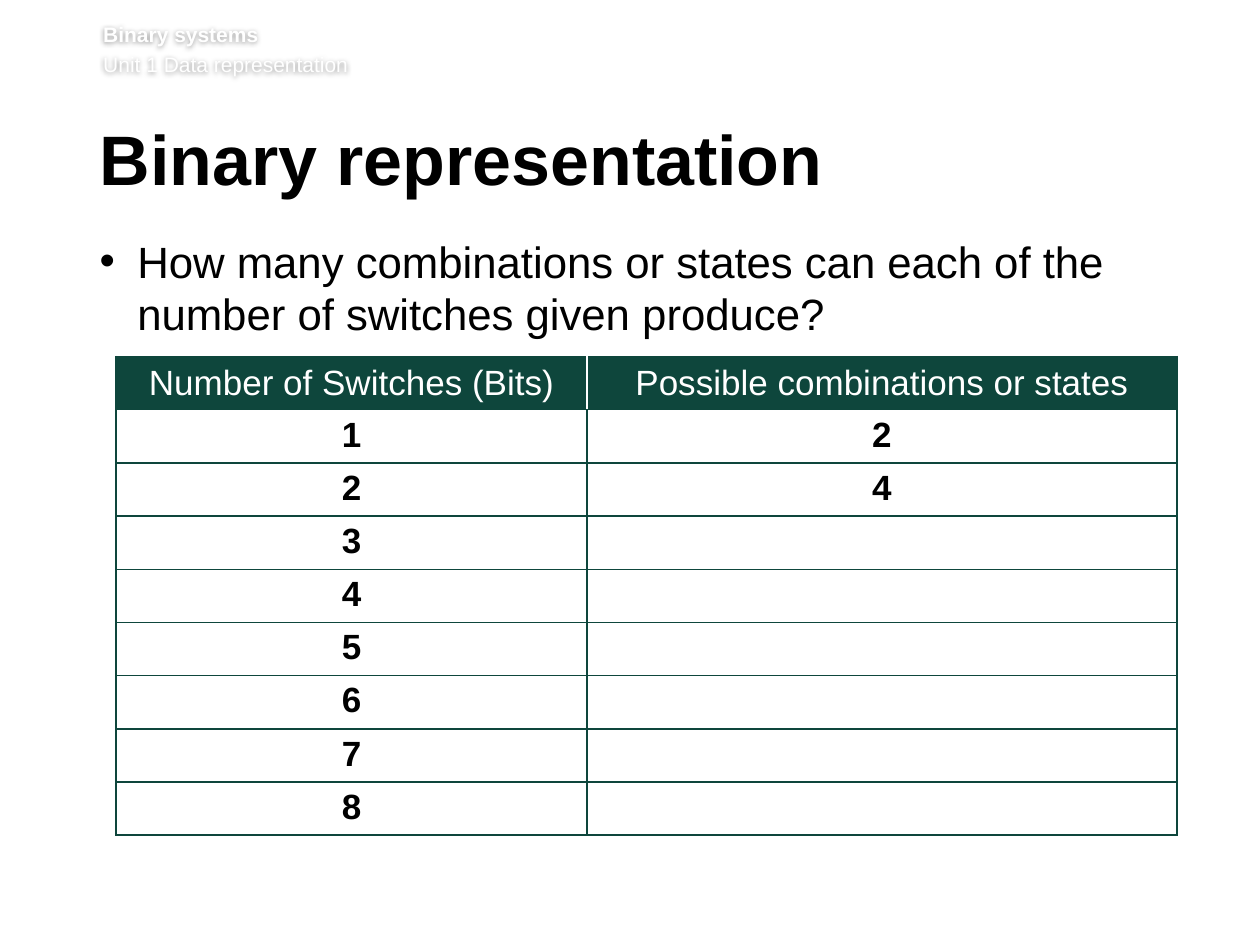
import lxml.etree
import pptx
import pptx.dml.color
import pptx.enum.text
import pptx.oxml
import pptx.oxml.ns
import pptx.util

Pt = pptx.util.Pt
qn = pptx.oxml.ns.qn
GREEN, WHITE, BLACK = "0E463C", "FFFFFF", "000000"
ROW_HEIGHT = 29.55
COLUMN_WIDTHS = (269.28, 336.96)
ROWS = [("Number of Switches (Bits)", "Possible combinations or states"),
        ("1", "2"), ("2", "4")] + [(str(bits), "") for bits in range(3, 9)]


def color(value):
    return pptx.dml.color.RGBColor.from_string(value)


def write(para, text, size, fill=BLACK, bold=False, **layout):
    """Put text in a paragraph; layout holds paragraph properties."""
    for name, value in layout.items():
        setattr(para, name, value)
    span = para.add_run()
    span.text = text
    span.font.name = "Arial"
    span.font.size = Pt(size)
    span.font.bold = bold
    span.font.color.rgb = color(fill)


def add_box(page, left, top, width, height, margins):
    box = page.shapes.add_textbox(Pt(left), Pt(top), Pt(width), Pt(height))
    frame = box.text_frame
    frame.word_wrap = True
    for side, margin in zip(("left", "top", "right", "bottom"), margins):
        setattr(frame, f"margin_{side}", Pt(margin))
    return box


def add_bullet(para, indent):
    properties = para._p.get_or_add_pPr()
    properties.set("marL", str(Pt(indent)))
    properties.set("indent", str(-Pt(indent)))
    lxml.etree.SubElement(properties, qn("a:buFont"), typeface="Arial")
    lxml.etree.SubElement(properties, qn("a:buChar"), char="•")


def add_soft_shadow(box):
    box._element.spPr.append(pptx.oxml.parse_xml(
        '<a:effectLst xmlns:a="http://schemas.openxmlformats.org/drawingml/2006/main">'
        '<a:outerShdw blurRad="38100" dist="0" dir="0"><a:srgbClr val="000000">'
        '<a:alpha val="40000"/></a:srgbClr></a:outerShdw></a:effectLst>'))


def set_border(cell, side, value):
    line = lxml.etree.SubElement(cell._tc.get_or_add_tcPr(), qn(f"a:ln{side}"), w=str(Pt(1)))
    solid = lxml.etree.SubElement(line, qn("a:solidFill"))
    lxml.etree.SubElement(solid, qn("a:srgbClr"), val=value)


def format_cell(cell, text, header, inner_side):
    """Borders go in before the fill, as the file format orders them."""
    for side in "LRTB":
        set_border(cell, side, WHITE if header and side == inner_side else GREEN)
    cell.fill.solid()
    cell.fill.fore_color.rgb = color(GREEN if header else WHITE)
    cell.margin_top = cell.margin_bottom = Pt(3.2)
    if header:
        cell.vertical_anchor = pptx.enum.text.MSO_ANCHOR.MIDDLE
    if text:
        write(cell.text_frame.paragraphs[0], text, 20, WHITE if header else BLACK,
              bold=not header, alignment=pptx.enum.text.PP_ALIGN.CENTER)


def add_states_table(page, left, top):
    table = page.shapes.add_table(
        len(ROWS), len(COLUMN_WIDTHS), Pt(left), Pt(top),
        Pt(sum(COLUMN_WIDTHS)), Pt(ROW_HEIGHT * len(ROWS))).table
    table.horz_banding = False
    for column, width in zip(table.columns, COLUMN_WIDTHS):
        column.width = Pt(width)
    for row_index, texts in enumerate(ROWS):
        table.rows[row_index].height = Pt(ROW_HEIGHT)
        for column_index, text in enumerate(texts):
            format_cell(table.cell(row_index, column_index), text,
                        header=row_index == 0, inner_side="RL"[column_index])


def main():
    deck = pptx.Presentation()
    deck.slide_width, deck.slide_height = Pt(720), Pt(540)
    page = deck.slides.add_slide(deck.slide_layouts[6])

    heading = add_box(page, 59, 12.2, 635, 35.3, (0, 0, 0, 3.6))
    add_soft_shadow(heading)
    write(heading.text_frame.paragraphs[0], "Binary systems", 12, WHITE, bold=True)
    write(heading.text_frame.add_paragraph(), "Unit 1 Data representation", 12, WHITE,
          space_before=Pt(2.9))

    title = add_box(page, 56.9, 71.3, 615.6, 52.6, (0, 3.6, 7.2, 3.6))
    write(title.text_frame.paragraphs[0], "Binary representation", 40, bold=True,
          line_spacing=Pt(39))

    question = add_box(page, 56.9, 133.9, 614.2, 272.2, (0, 0, 7.2, 3.6))
    para = question.text_frame.paragraphs[0]
    add_bullet(para, 21.6)
    write(para, "How many combinations or states can each of the number of "
          "switches given produce?", 25, line_spacing=Pt(30))

    add_states_table(page, 66.24, 203.76)
    deck.save("out.pptx")


if __name__ == "__main__":
    main()
